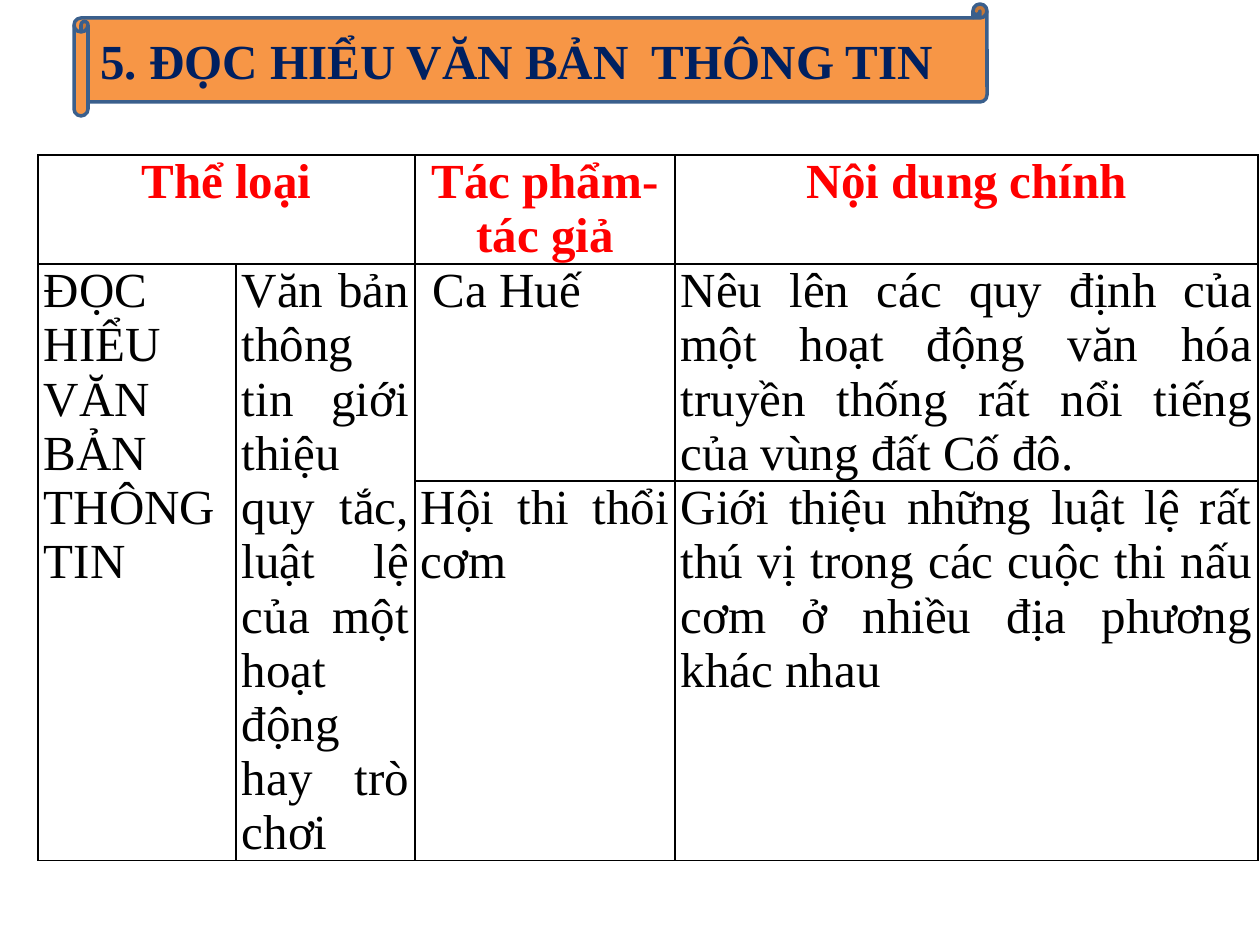
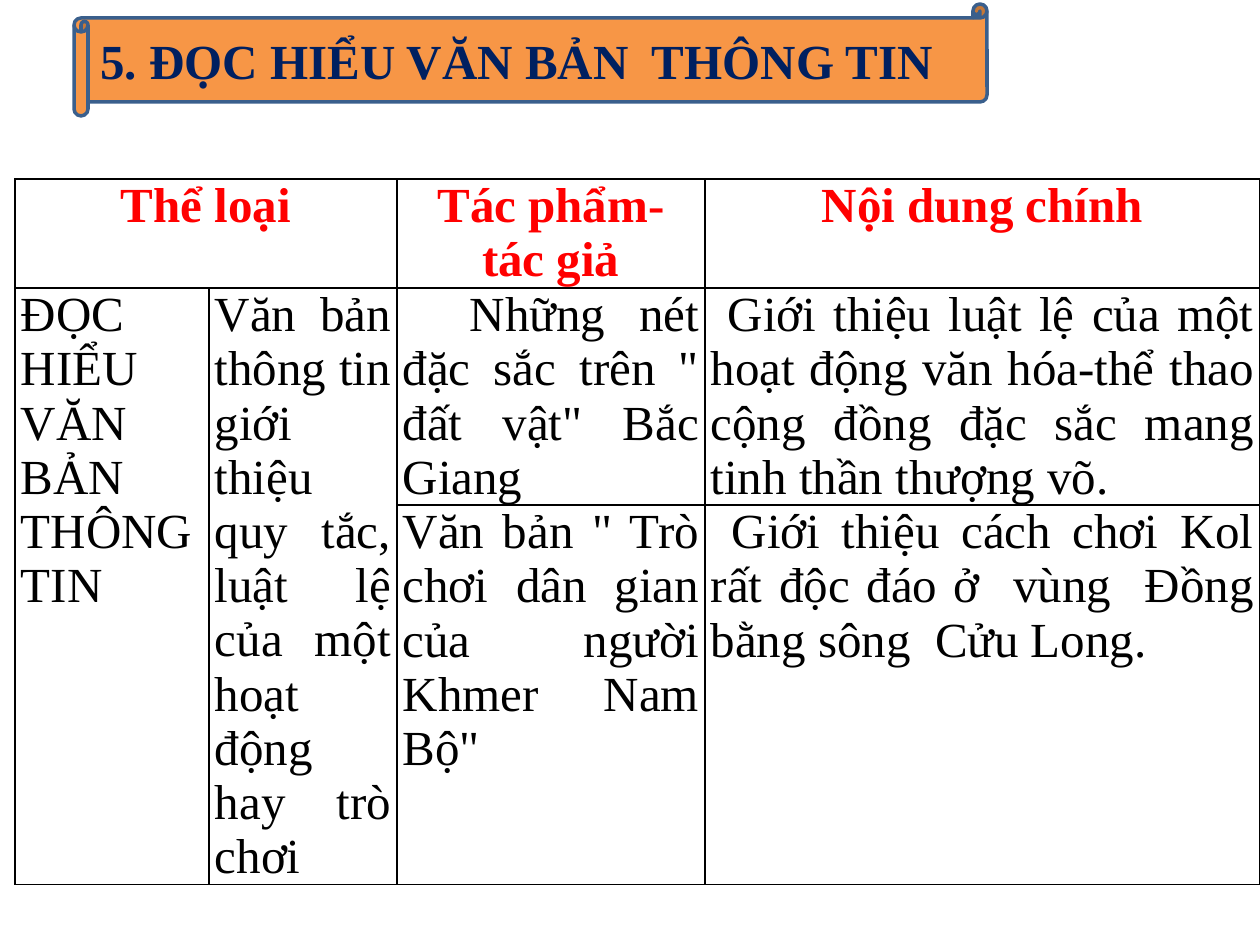
from lxml import etree
from pptx import Presentation
from pptx.dml.color import RGBColor
from pptx.enum.shapes import MSO_SHAPE
from pptx.enum.text import MSO_ANCHOR, PP_ALIGN
from pptx.oxml.ns import qn
from pptx.util import Emu, Pt

SCROLL = MSO_SHAPE.HORIZONTAL_SCROLL
MIDDLE = MSO_ANCHOR.MIDDLE
LEFT, CENTER, JUSTIFY = PP_ALIGN.LEFT, PP_ALIGN.CENTER, PP_ALIGN.JUSTIFY

PX_PER_INCH = 126
FONT = "Times New Roman"
TEXT_SIZE = 28
COLORS = {
    "banner": "F79646",
    "banner_line": "3A5F8C",
    "title": "002060",
    "heading": "FF0000",
    "body": "000000",
    "border": "000000",
    "cell": "FFFFFF",
}
TITLE = "5. ĐỌC HIỂU VĂN BẢN  THÔNG TIN"
HEADINGS = ["Thể loại", "", "Tác phẩm- tác giả", "Nội dung chính"]
GENRE = "ĐỌC HIỂU VĂN BẢN THÔNG TIN"
SUBGENRE = (
    "Văn bản thông tin giới thiệu quy tắc, luật lệ của một hoạt động hay trò chơi"
)
ROW_HEIGHTS = [109, 217, 379]
MERGES = [((0, 0), (0, 1)), ((1, 0), (2, 0)), ((1, 1), (2, 1))]

LESSONS = [
    {
        "corner": (38, 155),
        "columns": [198, 179, 260, 583],
        "works": [
            (
                "Ca Huế",
                "Nêu lên các quy định của một hoạt động văn hóa truyền thống "
                "rất nổi tiếng của vùng đất Cố đô.",
            ),
            (
                "Hội thi thổi cơm",
                "Giới thiệu những luật lệ rất thú vị trong các cuộc thi nấu cơm "
                "ở nhiều địa phương khác nhau",
            ),
        ],
        "indents": {(1, 2): 12},
    },
    {
        "corner": (15, 179),
        "columns": [194, 188, 308, 555],
        "works": [
            (
                'Những nét đặc sắc trên " đất vật" Bắc Giang',
                "Giới thiệu luật lệ của một hoạt động văn hóa-thể thao cộng đồng "
                "đặc sắc mang tinh thần thượng võ.",
            ),
            (
                'Văn bản " Trò chơi dân gian của người Khmer Nam Bộ"',
                "Giới thiệu cách chơi Kol rất độc đáo ở  vùng  Đồng bằng sông  Cửu Long.",
            ),
        ],
        "indents": {(1, 2): 67, (1, 3): 17, (2, 3): 21},
    },
]


def px(length):
    return Emu(round(length * 914400 / PX_PER_INCH))


def color(name):
    return RGBColor.from_string(COLORS[name])


def write(frame, text, color_name, align, bold=False, indent=0):
    para = frame.paragraphs[0]
    para.alignment = align
    if indent:
        para._p.get_or_add_pPr().set("indent", str(px(indent)))
    span = para.add_run()
    span.text = text
    span.font.name = FONT
    span.font.size = Pt(TEXT_SIZE)
    span.font.bold = bold
    span.font.color.rgb = color(color_name)


def add_banner(page):
    banner = page.shapes.add_shape(SCROLL, px(74), px(4), px(913), px(112))
    banner.shadow.inherit = False
    banner.fill.solid()
    banner.fill.fore_color.rgb = color("banner")
    banner.line.color.rgb = color("banner_line")
    banner.line.width = Pt(2)
    frame = banner.text_frame
    frame.word_wrap = True
    frame.vertical_anchor = MIDDLE
    write(frame, TITLE, "title", LEFT, bold=True)


def style_cell(cell):
    cell.margin_left = cell.margin_right = px(6)
    cell.margin_top = cell.margin_bottom = 0
    properties = cell._tc.get_or_add_tcPr()
    for side in ("a:lnL", "a:lnR", "a:lnT", "a:lnB"):
        border = etree.SubElement(properties, qn(side), w=str(Pt(1)))
        fill = etree.SubElement(border, qn("a:solidFill"))
        etree.SubElement(fill, qn("a:srgbClr"), val=COLORS["border"])
    cell.fill.solid()
    cell.fill.fore_color.rgb = color("cell")


def add_works_table(page, corner, columns, works, indents):
    left, top = corner
    rows = [HEADINGS, [GENRE, SUBGENRE, *works[0]], ["", "", *works[1]]]
    table = page.shapes.add_table(
        len(rows), len(columns), px(left), px(top),
        px(sum(columns)), px(sum(ROW_HEIGHTS)),
    ).table
    table.first_row = table.horz_banding = False
    for column, width in zip(table.columns, columns):
        column.width = px(width)
    for row, height in zip(table.rows, ROW_HEIGHTS):
        row.height = px(height)
    for start, end in MERGES:
        table.cell(*start).merge(table.cell(*end))
    for r, texts in enumerate(rows):
        for c, text in enumerate(texts):
            cell = table.cell(r, c)
            style_cell(cell)
            if not text:
                continue
            if r == 0:
                write(cell.text_frame, text, "heading", CENTER, bold=True)
            else:
                write(cell.text_frame, text, "body", JUSTIFY,
                      indent=indents.get((r, c), 0))


def main():
    deck = Presentation()
    deck.slide_width, deck.slide_height = px(1260), px(945)
    for lesson in LESSONS:
        page = deck.slides.add_slide(deck.slide_layouts[6])
        add_banner(page)
        add_works_table(page, **lesson)
    deck.save("out.pptx")


if __name__ == "__main__":
    main()
